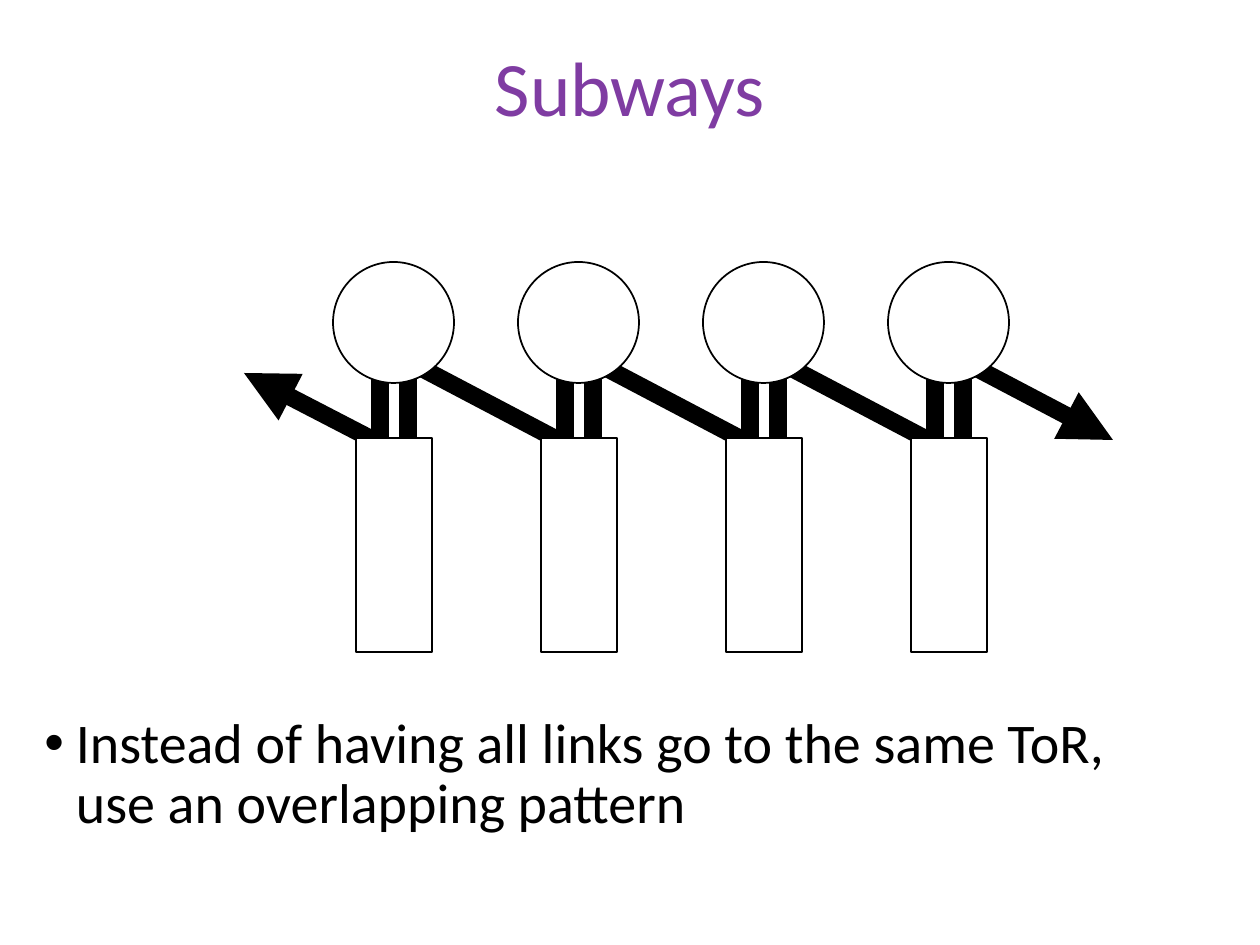
from lxml.etree import SubElement
from pptx import Presentation
from pptx.dml.color import RGBColor
from pptx.enum.shapes import MSO_CONNECTOR as CONNECTOR, MSO_SHAPE as SHAPE
from pptx.enum.text import MSO_ANCHOR as ANCHOR, PP_ALIGN as ALIGN
from pptx.oxml.ns import qn
from pptx.util import Pt

PX = 914400 // 126
BLACK = RGBColor(0x00, 0x00, 0x00)
WHITE = RGBColor(0xFF, 0xFF, 0xFF)
PURPLE = RGBColor(0x7F, 0x3C, 0xA2)

TITLE_FONT = {"name": "Calibri", "size": Pt(44)}
BODY_FONT = {"name": "Calibri", "size": Pt(32)}

RACK_COUNT = 4
PITCH = 185
FIRST_SWITCH = 89


def px(*lengths):
    return [length * PX for length in lengths]


def add_text(slide, box, text, font, color, align, bullet=None):
    frame = slide.shapes.add_textbox(*px(*box)).text_frame
    frame.word_wrap = True
    frame.vertical_anchor = ANCHOR.MIDDLE
    paragraph = frame.paragraphs[0]
    paragraph.text = text
    paragraph.alignment = align
    paragraph.line_spacing = 0.9
    if bullet:
        properties = paragraph._p.get_or_add_pPr()
        properties.set("marL", "228600")
        properties.set("indent", "-228600")
        SubElement(properties, qn("a:buFont"), typeface="Arial")
        SubElement(properties, qn("a:buChar"), char=bullet)
    for name, value in font.items():
        setattr(paragraph.font, name, value)
    paragraph.font.color.rgb = color


def add_link(slide, box, start, end, arrow=False):
    left, top = box[:2]
    link = slide.shapes.add_connector(
        CONNECTOR.STRAIGHT,
        *px(left + start[0], top + start[1], left + end[0], top + end[1]))
    link.line.color.rgb = BLACK
    link.line.width = Pt(10)
    if arrow:
        SubElement(link.line._get_or_add_ln(), qn("a:tailEnd"), type="triangle")
    SubElement(link._element.spPr, qn("a:effectLst"))


def add_node(slide, box, kind, x, y, width, height):
    left, top = box[:2]
    shape = slide.shapes.add_shape(kind, *px(left + x, top + y, width, height))
    shape.shadow.inherit = False
    shape.fill.solid()
    shape.fill.fore_color.rgb = WHITE
    shape.line.color.rgb = BLACK
    shape.line.width = Pt(1)


def add_subway_network(slide, box):
    width = box[2]
    switches = [FIRST_SWITCH + PITCH * index for index in range(RACK_COUNT)]
    add_link(slide, box, (switches[0] + 77, 197), (0, 111), arrow=True)
    add_link(slide, box, (switches[-1] + 52, 87), (width, 178), arrow=True)
    for switch, neighbour in zip(switches, switches[1:]):
        add_link(slide, box, (switch + 52, 87), (neighbour + 76, 197))
    for x in switches:
        for offset in (47, 75):
            add_link(slide, box, (x + offset, 195), (x + offset, 96))
    for x in switches:
        add_node(slide, box, SHAPE.OVAL, x, 0, 121, 121)
        add_node(slide, box, SHAPE.RECTANGLE, x + 23, 176, 76, 214)


def main():
    presentation = Presentation()
    presentation.slide_width, presentation.slide_height = px(1260, 945)
    slide = presentation.slides.add_slide(presentation.slide_layouts[6])
    add_subway_network(slide, (244, 262, 869, 390))
    add_text(slide, (87, 0, 1086, 183), "Subways", TITLE_FONT, PURPLE, ALIGN.CENTER)
    add_text(slide, (32, 631, 1138, 289),
             "Instead of having all links go to the same ToR, use an overlapping pattern",
             BODY_FONT, BLACK, ALIGN.LEFT, bullet="•")
    presentation.save("out.pptx")


if __name__ == "__main__":
    main()
